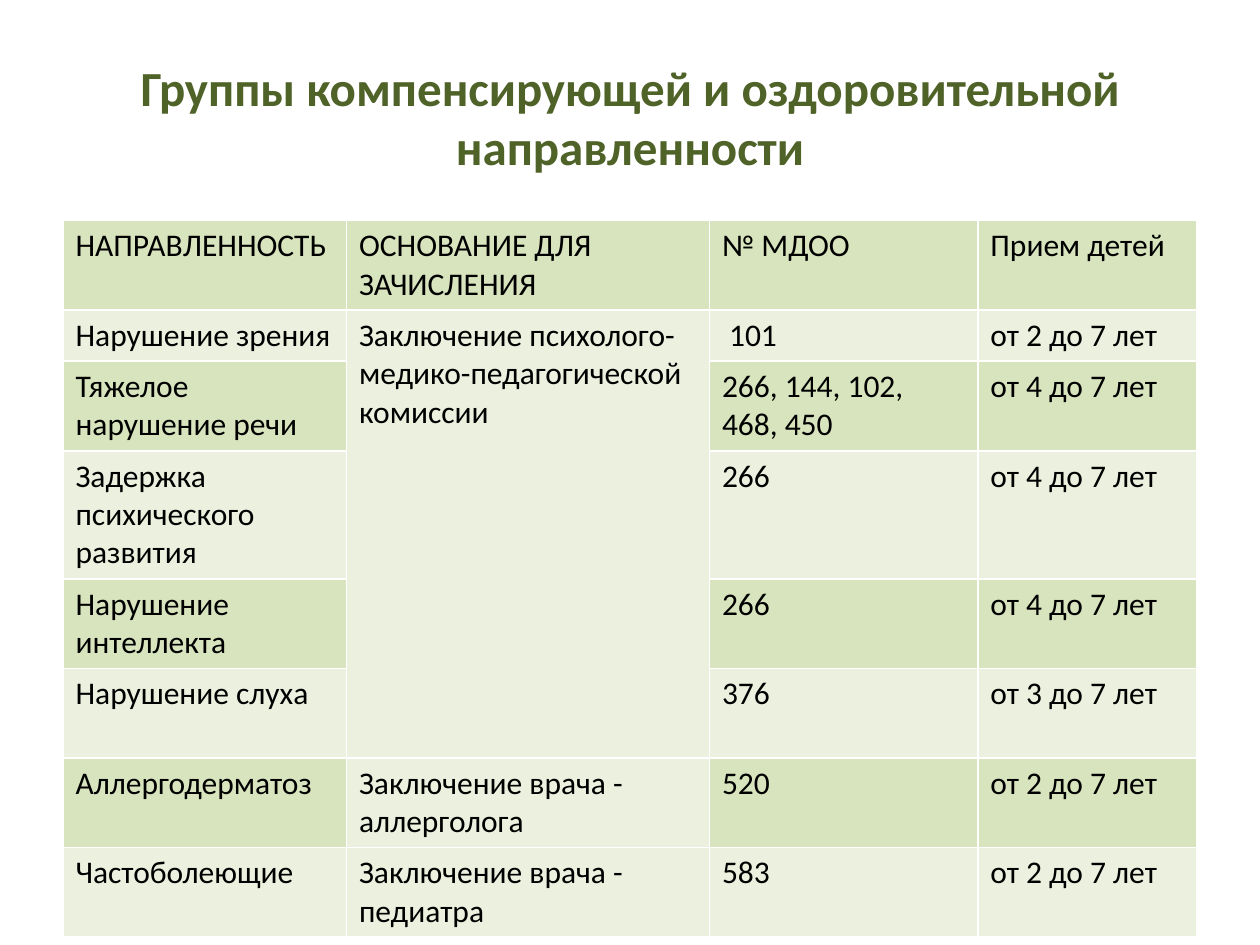
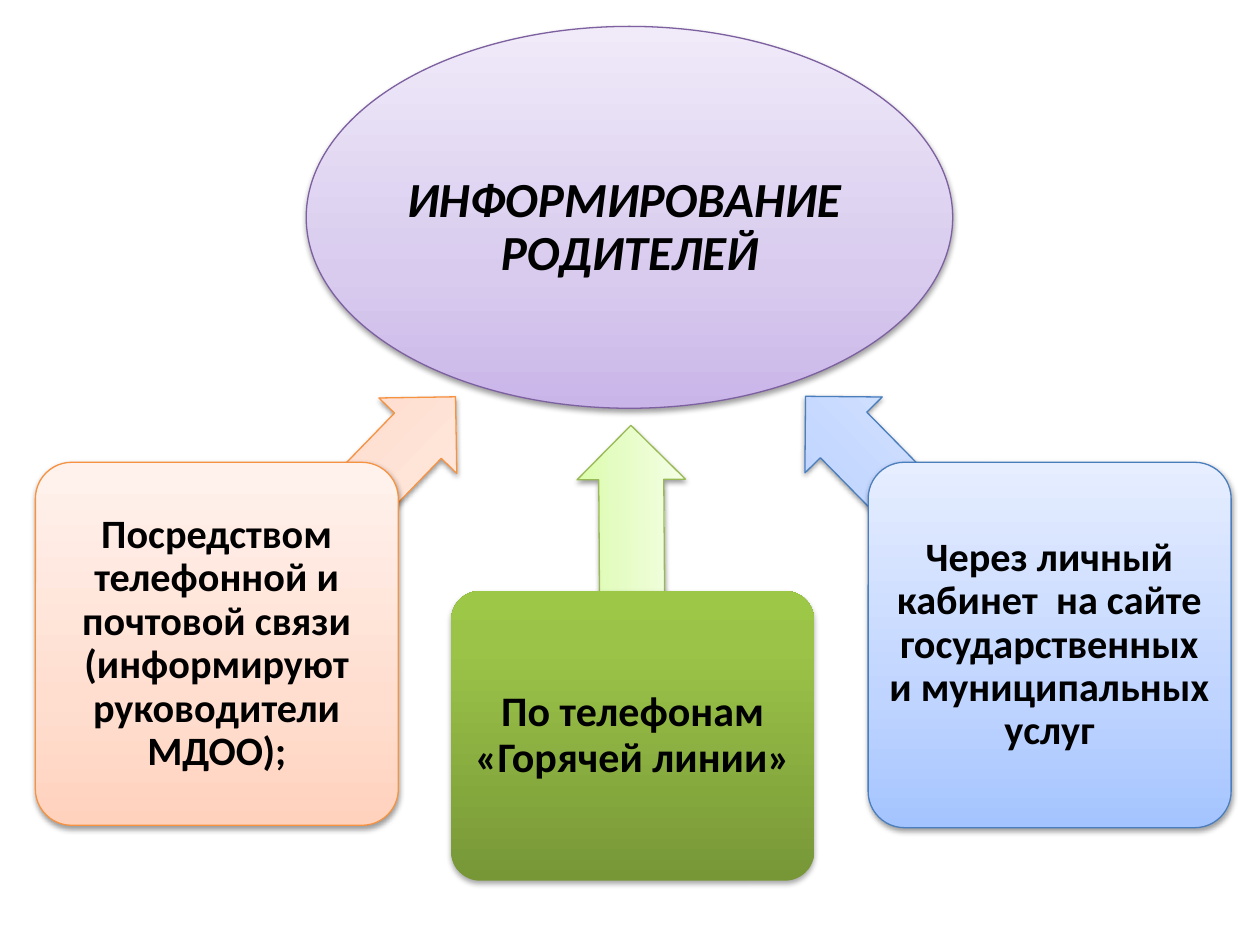
"""Builds two slides: a table of kindergarten groups and a diagram on informing parents."""
from pptx import Presentation
from pptx.dml.color import RGBColor
from pptx.enum.shapes import MSO_SHAPE
from pptx.enum.text import MSO_ANCHOR, PP_ALIGN
from pptx.oxml import parse_xml
from pptx.oxml.ns import nsdecls
from pptx.util import Pt

FONT = "Calibri"
BLACK, OLIVE = "000000", "4F6228"
BAND, PALE = "D7E4BD", "EBF1DE"
VIOLET = [(0, "C9B5E8"), (35, "D8CBEE"), (100, "F0EAF9")]
PEACH = [(0, "FFD2BD"), (35, "FFDED0"), (100, "FFF2ED")]
LIME = [(0, "DAFDA7"), (35, "E4FCC2"), (100, "F5FFE7")]
GREEN = [(0, "779737"), (80, "9BC348"), (100, "9DC746")]
BLUE = [(0, "A4C4FF"), (35, "BFD4FF"), (100, "E6EEFF")]


def write(frame, text, size, tint=BLACK, bold=False, align=None):
    frame.text = text
    frame.word_wrap = True
    for para in frame.paragraphs:
        para.alignment = align
        for run in para.runs:
            font = run.font
            font.name, font.size, font.bold = FONT, Pt(size), bold
            font.color.rgb = RGBColor.from_string(tint)


def draw(kind, place, stops, edge=None, turn=0, alpha=38):
    shape = slide.shapes.add_shape(kind, *[Pt(n) for n in place])
    shape.rotation = turn
    marks = "".join(
        f'<a:gs pos="{pos * 1000}"><a:srgbClr val="{tint}"/></a:gs>' for pos, tint in stops)
    props = shape.element.spPr
    props.insert(2, parse_xml(
        f'<a:gradFill {nsdecls("a")} rotWithShape="1"><a:gsLst>{marks}</a:gsLst>'
        '<a:lin ang="16200000" scaled="0"/></a:gradFill>'))
    if edge:
        shape.line.color.rgb = RGBColor.from_string(edge)
        shape.line.width = Pt(0.75)
    else:
        shape.line.fill.background()
    props.append(parse_xml(
        f'<a:effectLst {nsdecls("a")}><a:outerShdw blurRad="{Pt(3.1)}" dist="{Pt(1.6)}" '
        f'dir="5400000" rotWithShape="0"><a:srgbClr val="{BLACK}">'
        f'<a:alpha val="{alpha * 1000}"/></a:srgbClr></a:outerShdw></a:effectLst>'))
    return shape


deck = Presentation()
deck.slide_width, deck.slide_height = Pt(720), Pt(540)

slide = deck.slides.add_slide(deck.slide_layouts[5])
title = slide.shapes.title
title.left, title.top, title.width, title.height = Pt(36), Pt(21.6), Pt(648), Pt(90)
write(title.text_frame, "Группы компенсирующей и оздоровительной направленности",
      28, OLIVE, True, PP_ALIGN.CENTER)

rows = [
    ("НАПРАВЛЕННОСТЬ", "ОСНОВАНИЕ ДЛЯ ЗАЧИСЛЕНИЯ", "№ МДОО", "Прием детей"),
    ("Нарушение зрения", "Заключение психолого-медико-педагогической комиссии",
     " 101", "от 2 до 7 лет"),
    ("Тяжелое нарушение речи", "", "266, 144, 102, 468, 450", "от 4 до 7 лет"),
    ("Задержка психического развития", "", "266", "от 4 до 7 лет"),
    ("Нарушение интеллекта", "", "266", "от 4 до 7 лет"),
    ("Нарушение слуха", "", "376", "от 3 до 7 лет"),
    ("Аллергодерматоз", "Заключение врача - аллерголога", "520", "от 2 до 7 лет"),
    ("Частоболеющие", "Заключение врача - педиатра", "583", "от 2 до 7 лет"),
]
widths = [162, 207.4, 153.4, 125.2]
lines = [2, 1, 2, 3, 2, 2, 2, 2]
table = slide.shapes.add_table(
    len(rows), len(widths), Pt(36), Pt(126), Pt(sum(widths)), Pt(409)).table
table.first_row = table.horz_banding = False
for col, width in zip(table.columns, widths):
    col.width = Pt(width)
for i, (row, count) in enumerate(zip(rows, lines)):
    table.rows[i].height = Pt(7.2 + 22 * count)
    for j, text in enumerate(row):
        cell = table.cell(i, j)
        shade = PALE if i % 2 or (j == 1 and i) else BAND
        cell.fill.solid()
        cell.fill.fore_color.rgb = RGBColor.from_string(shade)
        write(cell.text_frame, text, 18)
table.cell(1, 1).merge(table.cell(5, 1))

slide = deck.slides.add_slide(deck.slide_layouts[6])
hub = draw(MSO_SHAPE.OVAL, (175, 15.1, 369.4, 218.2), VIOLET, "7D60A0")
frame = hub.text_frame
write(frame, "ИНФОРМИРОВАНИЕ  РОДИТЕЛЕЙ", 28, BLACK, True, PP_ALIGN.CENTER)
frame.paragraphs[0].runs[0].font.italic = True
frame.paragraphs[0].line_spacing = 0.9
frame.vertical_anchor = MSO_ANCHOR.MIDDLE
frame.margin_left = frame.margin_right = frame.margin_bottom = Pt(1.4)
frame.margin_top = Pt(14)

ways = [
    ("Через личный кабинет  на сайте государственных и муниципальных услуг", 23,
     (496.1, 264.2, 207.4, 208.8), BLUE, "4B7EBC", 38,
     (430.6, 266.4, 198.7, 61.9), 45.5, BLUE, "4B7EBC"),
    ("По телефонам «Горячей линии»", 24,
     (257.8, 337.7, 207.4, 165.6), GREEN, None, 35,
     (272.2, 301, 177.8, 61.9), 89.6, LIME, "98B955"),
    ("Посредством телефонной и почтовой связи (информируют руководители МДОО);", 23,
     (20.2, 264.2, 207.4, 207.4), PEACH, "F69240", 38,
     (93.6, 266.4, 196.6, 61.9), 134.1, PEACH, "F69240"),
]
for text, size, place, stops, edge, alpha, track, turn, glow, rim in ways:
    arrow = draw(MSO_SHAPE.LEFT_ARROW, track, glow, rim, turn)
    arrow.adjustments[0], arrow.adjustments[1] = 0.6, 0.5
    box = draw(MSO_SHAPE.ROUNDED_RECTANGLE, place, stops, edge, 0, alpha)
    box.adjustments[0] = 0.1
    frame = box.text_frame
    write(frame, text, size, BLACK, True, PP_ALIGN.CENTER)
    frame.paragraphs[0].line_spacing = 0.9
    frame.vertical_anchor = MSO_ANCHOR.MIDDLE
    frame.margin_left = frame.margin_right = Pt(3.6)
    frame.margin_top = frame.margin_bottom = Pt(3.6)

deck.save("out.pptx")
